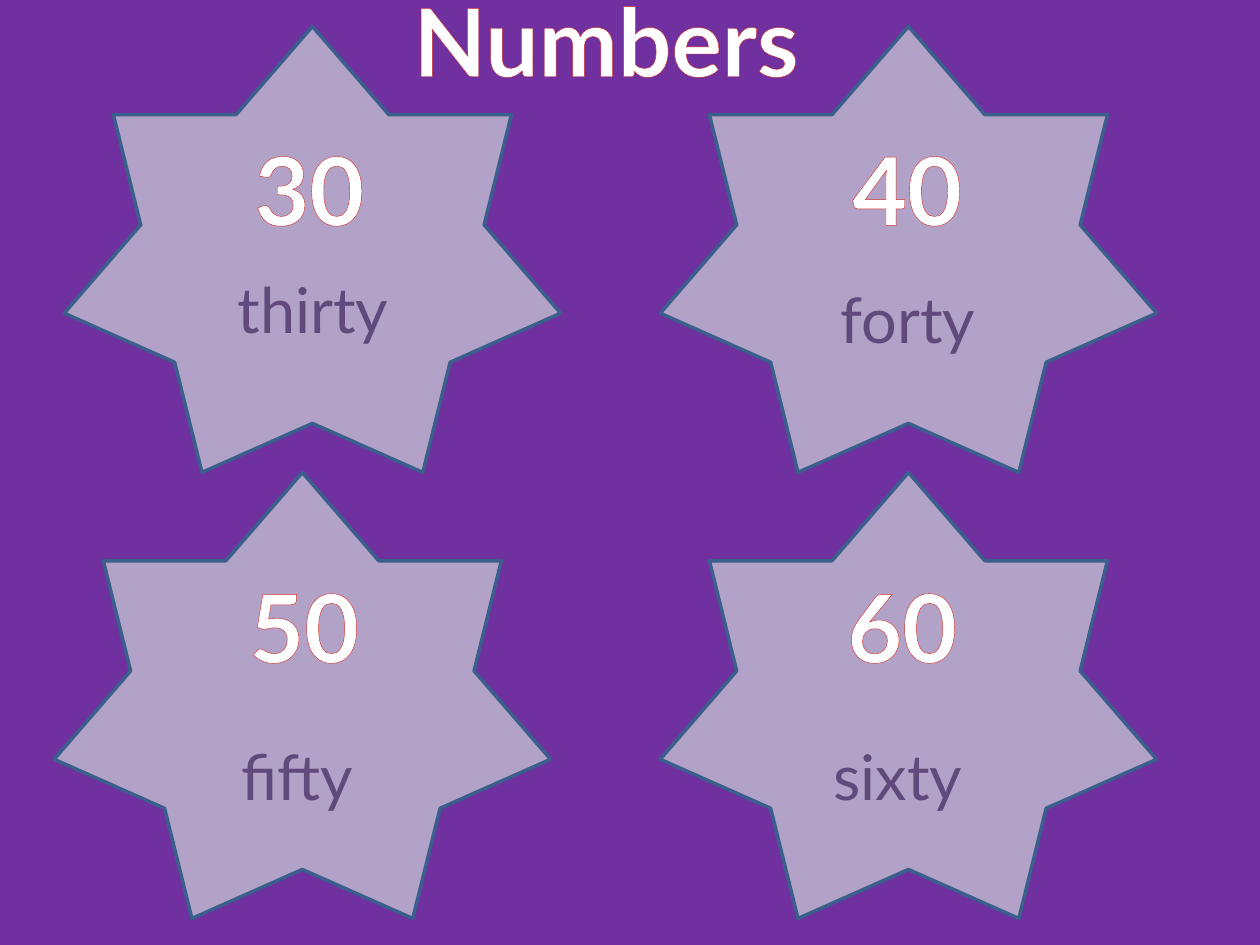
from dataclasses import dataclass

from lxml.etree import SubElement
from pptx import Presentation
from pptx.dml.color import RGBColor
from pptx.enum.shapes import MSO_SHAPE
from pptx.enum.text import MSO_AUTO_SIZE, PP_ALIGN
from pptx.oxml.ns import qn
from pptx.util import Inches, Pt


@dataclass(frozen=True)
class Theme:
    font: str = "Lato"
    background: str = "7030A0"
    star: str = "B3A2C7"
    star_line: str = "3A5F8C"
    heading: str = "FFFFFF"
    heading_outline: str = "D02F2A"
    word: str = "604A7B"
    star_line_pt: float = 2
    outline_pt: float = 1.93
    heading_pt: int = 54
    word_pt: int = 36


theme = Theme()
rgb = RGBColor.from_string

prs = Presentation()
prs.slide_width, prs.slide_height = Inches(10), Inches(7.5)
unit = prs.slide_width // 100  # the slide is a grid of 100 columns by 75 rows
slide = prs.slides.add_slide(prs.slide_layouts[6])
slide.background.fill.solid()
slide.background.fill.fore_color.rgb = rgb(theme.background)


def grid(*cells):
    return [round(cell * unit) for cell in cells]


def add_label(text, center, top, width, heading=False):
    """Add centred text, either a bold outlined heading or a plain word."""
    height = 10.1 if heading else 7.1
    box = slide.shapes.add_textbox(*grid(center - width / 2, top, width, height))
    tf = box.text_frame
    tf.text = text
    tf.word_wrap = not heading
    tf.auto_size = MSO_AUTO_SIZE.SHAPE_TO_FIT_TEXT
    p = tf.paragraphs[0]
    p.alignment = PP_ALIGN.CENTER
    font = p.runs[0].font
    font.name = theme.font
    font.size = Pt(theme.heading_pt if heading else theme.word_pt)
    font.color.rgb = rgb(theme.heading if heading else theme.word)
    if heading:
        font.bold = True
        rPr = p.runs[0]._r.get_or_add_rPr()
        ln = SubElement(rPr, qn("a:ln"), w=str(Pt(theme.outline_pt)))
        fill = SubElement(ln, qn("a:solidFill"))
        SubElement(fill, qn("a:srgbClr"), val=theme.heading_outline)
        rPr.insert(0, ln)  # the outline comes before the fill


star_width, star_height = 39.4, 35.4
top_row, bottom_row = 2.1, 37.5

# star left, star top, (number, centre, top, width), (word, centre, top, width)
stars = [
    (5.1, top_row, ("30", 24.55, 9.9, 14.5), ("thirty", 24.85, 21, 33.1)),
    (4.3, bottom_row, ("50", 24.15, 44.6, 14.7), ("fifty", 23.6, 58, 27.6)),
    (52.4, bottom_row, ("60", 71.6, 44.6, 14.8), ("sixty", 71.25, 58, 31.5)),
    (52.4, top_row, ("40", 72, 9.9, 15), ("forty", 72.05, 21.8, 29.9)),
]

for left, top, _, _ in stars:
    sp = slide.shapes.add_shape(
        MSO_SHAPE.STAR_7_POINT, *grid(left, top, star_width, star_height))
    sp.shadow.inherit = False
    sp.fill.solid()
    sp.fill.fore_color.rgb = rgb(theme.star)
    sp.line.color.rgb = rgb(theme.star_line)
    sp.line.width = Pt(theme.star_line_pt)

add_label("Numbers", 48.1, -1.9, 38.8, heading=True)
for _, _, number, word in stars:
    add_label(*number, heading=True)
    add_label(*word)

prs.save("out.pptx")
